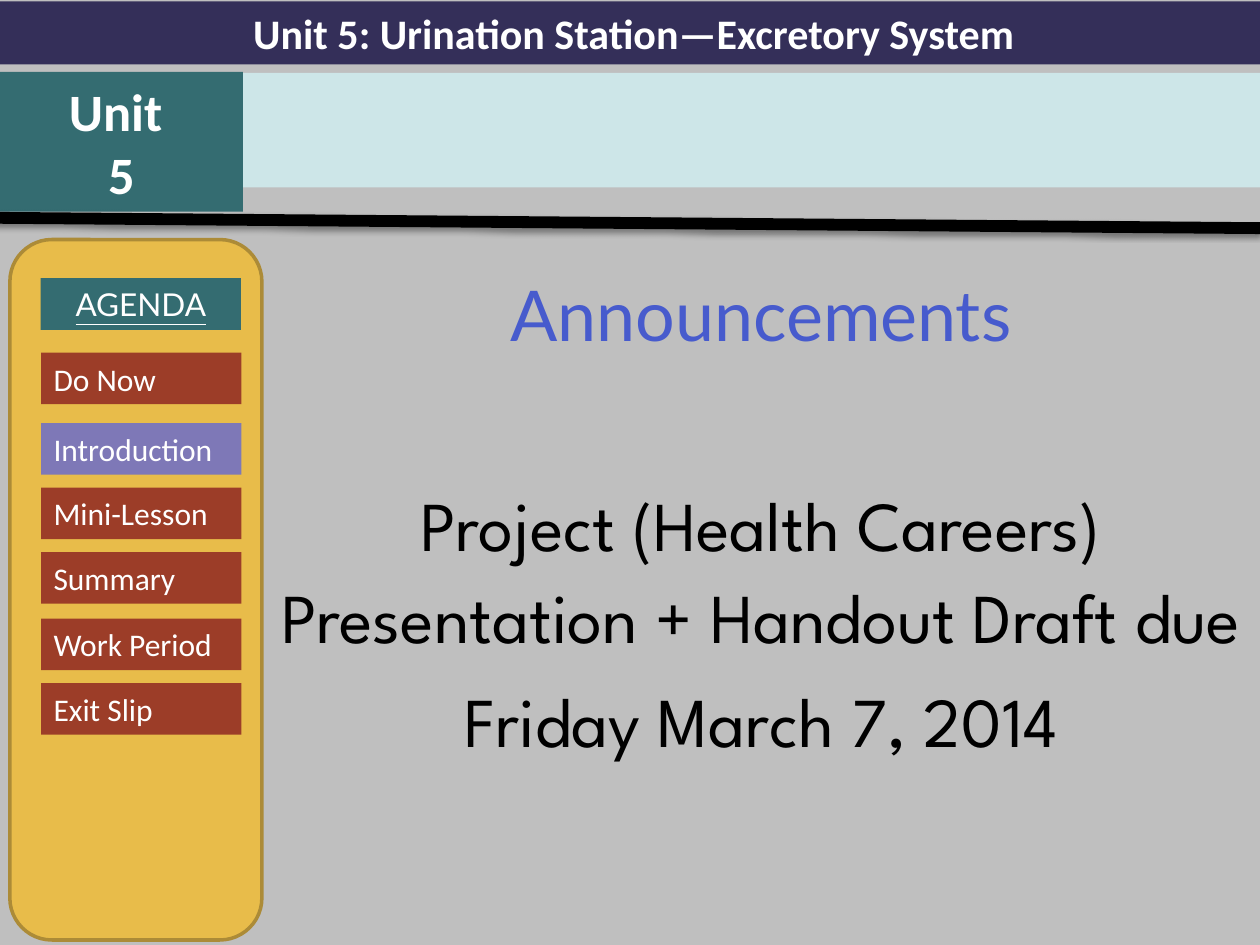
from dataclasses import dataclass
from typing import Optional

from lxml.etree import SubElement
from pptx import Presentation
from pptx.dml.color import RGBColor
from pptx.enum.shapes import MSO_CONNECTOR, MSO_SHAPE
from pptx.enum.text import MSO_ANCHOR, MSO_AUTO_SIZE, PP_ALIGN
from pptx.oxml.ns import qn
from pptx.util import Cm, Pt

GREY = RGBColor(0xBF, 0xBF, 0xBF)
NAVY = RGBColor(0x34, 0x2F, 0x59)
TEAL = RGBColor(0x34, 0x6C, 0x71)
PALE = RGBColor(0xCD, 0xE6, 0xE8)
GOLD = RGBColor(0xE8, 0xBC, 0x4A)
BRONZE = RGBColor(0xAC, 0x8B, 0x37)
RUST = RGBColor(0x9C, 0x3D, 0x28)
VIOLET = RGBColor(0x7E, 0x78, 0xB7)
BLUE = RGBColor(0x47, 0x5B, 0xCD)
BLACK = RGBColor(0, 0, 0)
WHITE = RGBColor(0xFF, 0xFF, 0xFF)


@dataclass
class Box:
    left: float
    top: float
    width: float
    height: float
    fill: RGBColor
    lines: tuple = ()
    size: int = 18
    font: str = "Calibri"
    align: PP_ALIGN = PP_ALIGN.CENTER
    bold: bool = False
    under: bool = False
    edge: Optional[RGBColor] = None
    kind: MSO_SHAPE = MSO_SHAPE.RECTANGLE


@dataclass
class Step:
    text: str
    top: float
    fill: RGBColor = RUST


BANNER = Box(0, 0.03, 25.55, 1.27, NAVY,
             ("Unit 5: Urination Station—Excretory System",), 24, bold=True)
UNIT = Box(0, 1.45, 4.9, 2.82, TEAL, ("Unit ", "5"), 30, bold=True)
STRIP = Box(4.9, 1.47, 20.57, 2.31, PALE)
PANEL = Box(0.2, 4.83, 5.08, 14.12, GOLD, edge=BRONZE,
            kind=MSO_SHAPE.ROUNDED_RECTANGLE)
AGENDA = Box(0.82, 5.61, 4.04, 1.04, TEAL, ("AGENDA",), font="Lato", under=True)
STEPS = (
    Step("Do Now", 7.11),
    Step("Introduction", 8.53, VIOLET),
    Step("Mini-Lesson", 9.83),
    Step("Summary", 11.13),
    Step("Work Period", 12.47),
    Step("Exit Slip", 13.77),
)
# text, font, colour, space before in points
NEWS = (
    ("Announcements", "Lato", BLUE, 0),
    ("Project (Health Careers) Presentation + Handout Draft due ",
     "League Spartan", BLACK, 67),
    ("Friday March 7, 2014", "League Spartan", BLACK, 6.4),
)


def put(item, values: dict) -> None:
    """Set every named value as an attribute of item."""
    for name, value in values.items():
        setattr(item, name, value)


def place(shape, left: float, top: float, width: float, height: float) -> None:
    put(shape, {"left": Cm(left), "top": Cm(top),
                "width": Cm(width), "height": Cm(height)})


def write(para, text: str, color: RGBColor, style: dict) -> None:
    run = para.add_run()
    run.text = text
    put(run.font, style)
    run.font.color.rgb = color


def dress(shape, box: Box) -> None:
    """Fill the shape and write its lines."""
    shape.fill.solid()
    shape.fill.fore_color.rgb = box.fill
    frame = shape.text_frame
    put(frame, {"word_wrap": True, "auto_size": MSO_AUTO_SIZE.NONE,
                "vertical_anchor": MSO_ANCHOR.MIDDLE})
    style = {"size": Pt(box.size), "name": box.font,
             "bold": box.bold, "underline": box.under}
    for i, text in enumerate(box.lines):
        para = frame.add_paragraph() if i else frame.paragraphs[0]
        para.alignment = box.align
        write(para, text, WHITE, style)


def draw(shapes, box: Box) -> None:
    shape = shapes.add_shape(box.kind, Cm(box.left), Cm(box.top),
                             Cm(box.width), Cm(box.height))
    shape.shadow.inherit = False
    dress(shape, box)
    if box.edge is None:
        shape.line.fill.background()
    else:
        shape.line.color.rgb = box.edge
        shape.line.width = Pt(2)


def rule(shapes) -> None:
    """Draw the heavy black divider with its soft shadow."""
    line = shapes.add_connector(MSO_CONNECTOR.STRAIGHT, Cm(-0.13), Cm(4.39),
                                Cm(25.4), Cm(4.6))
    line.line.color.rgb = BLACK
    line.line.width = Pt(6.75)
    effects = SubElement(line._element.spPr, qn("a:effectLst"))
    shade = SubElement(effects, qn("a:outerShdw"), blurRad=str(Pt(3.1)),
                       dist=str(Pt(1.6)), dir="5400000", rotWithShape="0")
    tint = SubElement(shade, qn("a:srgbClr"), val=str(BLACK))
    SubElement(tint, qn("a:alpha"), val="38000")


def news(body) -> None:
    place(body, 5.28, 5.18, 20.12, 13.87)
    frame = body.text_frame
    put(frame, {"word_wrap": True, "auto_size": MSO_AUTO_SIZE.NONE,
                "vertical_anchor": MSO_ANCHOR.TOP})
    for i, (text, font, color, gap) in enumerate(NEWS):
        para = frame.add_paragraph() if i else frame.paragraphs[0]
        put(para, {"alignment": PP_ALIGN.CENTER, "line_spacing": 1.1,
                   "space_before": Pt(gap)})
        write(para, text, color, {"size": Pt(40), "name": font})


def main() -> None:
    deck = Presentation()
    put(deck, {"slide_width": Cm(25.4), "slide_height": Cm(19.05)})
    slide = deck.slides.add_slide(deck.slide_layouts[0])
    slide.background.fill.solid()
    slide.background.fill.fore_color.rgb = GREY
    shapes = slide.shapes

    title = shapes.title
    place(title, BANNER.left, BANNER.top, BANNER.width, BANNER.height)
    dress(title, BANNER)
    news(slide.placeholders[1])
    for box in (UNIT, STRIP):
        draw(shapes, box)
    rule(shapes)

    menu = shapes.add_group_shape().shapes
    for box in (PANEL, AGENDA):
        draw(menu, box)
    for step in STEPS:
        draw(menu, Box(0.83, step.top, 4.04, 1.04, step.fill, (step.text,),
                       align=PP_ALIGN.LEFT))
    deck.save("out.pptx")


if __name__ == "__main__":
    main()
